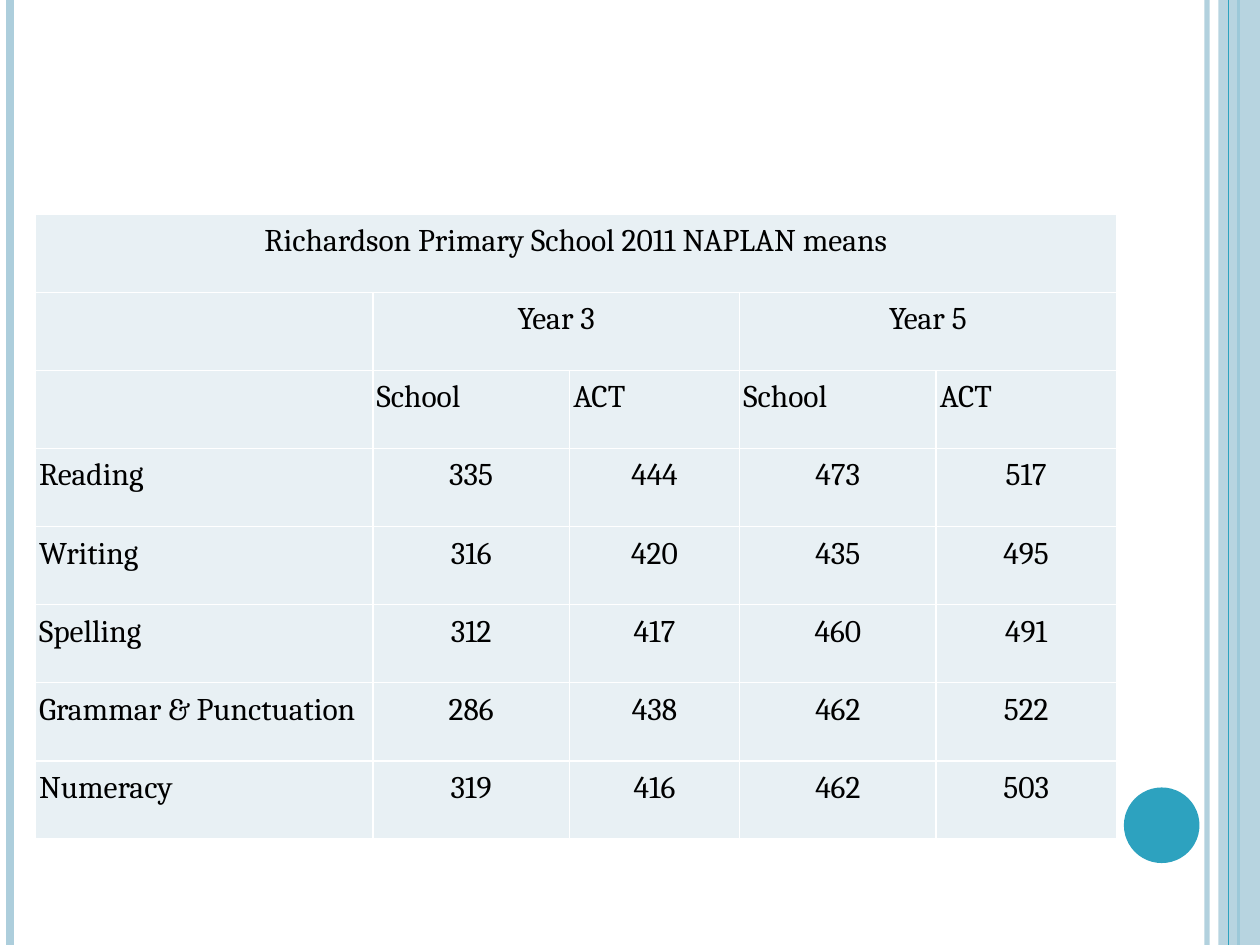
from lxml.etree import SubElement
from pptx import Presentation
from pptx.dml.color import RGBColor
from pptx.enum.shapes import MSO_CONNECTOR, MSO_SHAPE
from pptx.enum.text import PP_ALIGN
from pptx.oxml.ns import qn
from pptx.util import Inches, Pt

PALE_BLUE, TEAL, CELL_BLUE = "ADCEDC", "2DA2BF", "E8F0F4"


def paint(color_fill, color, opacity=100):
    """Make a fill solid, with opacity in percent."""
    color_fill.solid()
    color_fill.fore_color.rgb = RGBColor.from_string(color)
    if opacity < 100:
        srgb = color_fill._xPr.find(qn("a:solidFill")).find(qn("a:srgbClr"))
        SubElement(srgb, qn("a:alpha"), val=str(opacity * 1000))


def add_stripe(x, color, width, opacity=100):
    """Draw a vertical line down the full slide."""
    stripe = slide.shapes.add_connector(
        MSO_CONNECTOR.STRAIGHT, Inches(x), 0, Inches(x), Inches(7.5))
    stripe.line.width = Pt(width)
    paint(stripe.line.fill, color, opacity)
    SubElement(stripe._element.spPr, qn("a:effectLst"))


prs = Presentation()
prs.slide_width, prs.slide_height = Inches(10), Inches(7.5)
slide = prs.slides.add_slide(prs.slide_layouts[6])

# Side stripes, right band and disc
add_stripe(9.58, PALE_BLUE, 3, 93)
add_stripe(0.08, PALE_BLUE, 4.5)
add_stripe(9.83, TEAL, 1.5)
band = slide.shapes.add_shape(
    MSO_SHAPE.RECTANGLE, Inches(9.67), 0, Inches(0.33), Inches(7.5))
paint(band.fill, PALE_BLUE, 87)
add_stripe(9.75, TEAL, 0.75)
disc = slide.shapes.add_shape(
    MSO_SHAPE.OVAL, Inches(8.92), Inches(6.25), Inches(0.6), Inches(0.6))
paint(disc.fill, TEAL)
for decoration in (band, disc):
    decoration.line.fill.background()
    decoration.shadow.inherit = False

# Results table
results = [
    ["Richardson Primary School 2011 NAPLAN means", "", "", "", ""],
    ["", "Year 3", "", "Year 5", ""],
    ["", "School", "ACT", "School", "ACT"],
    ["Reading", "335", "444", "473", "517"],
    ["Writing", "316", "420", "435", "495"],
    ["Spelling", "312", "417", "460", "491"],
    ["Grammar & Punctuation", "286", "438", "462", "522"],
    ["Numeracy", "319", "416", "462", "503"],
]
column_widths = [2.68, 1.56, 1.35, 1.56, 1.43]
row_height = 0.62
table = slide.shapes.add_table(
    len(results), len(column_widths), Inches(0.28), Inches(1.7),
    Inches(sum(column_widths)), Inches(row_height * len(results))).table
table.first_row = table.horz_banding = False
for column, width in zip(table.columns, column_widths):
    column.width = Inches(width)
for row in table.rows:
    row.height = Inches(row_height)

for r, labels in enumerate(results):
    for c, label in enumerate(labels):
        cell = table.cell(r, c)
        cell.margin_left = cell.margin_right = Inches(0.03)
        cell.margin_top = cell.margin_bottom = Inches(0.03)
        cell_props = cell._tc.get_or_add_tcPr()
        for side in ("lnL", "lnR", "lnT", "lnB"):
            border = SubElement(cell_props, qn(f"a:{side}"), w=str(Pt(1)))
            border_fill = SubElement(border, qn("a:solidFill"))
            SubElement(border_fill, qn("a:srgbClr"), val="FFFFFF")
        paint(cell.fill, CELL_BLUE)
        if not label:
            continue
        paragraph = cell.text_frame.paragraphs[0]
        paragraph.line_spacing = 1.15
        paragraph.space_after = Pt(10)
        left_aligned = r == 2 or (c == 0 and r > 0)
        paragraph.alignment = PP_ALIGN.LEFT if left_aligned else PP_ALIGN.CENTER
        run = paragraph.add_run()
        run.text = label
        run.font.name = "Cambria"
        run.font.size = Pt(18)
        run.font.color.rgb = RGBColor.from_string("000000")

for r, first, last in [(0, 0, 4), (1, 1, 2), (1, 3, 4)]:
    table.cell(r, first).merge(table.cell(r, last))

prs.save("out.pptx")
